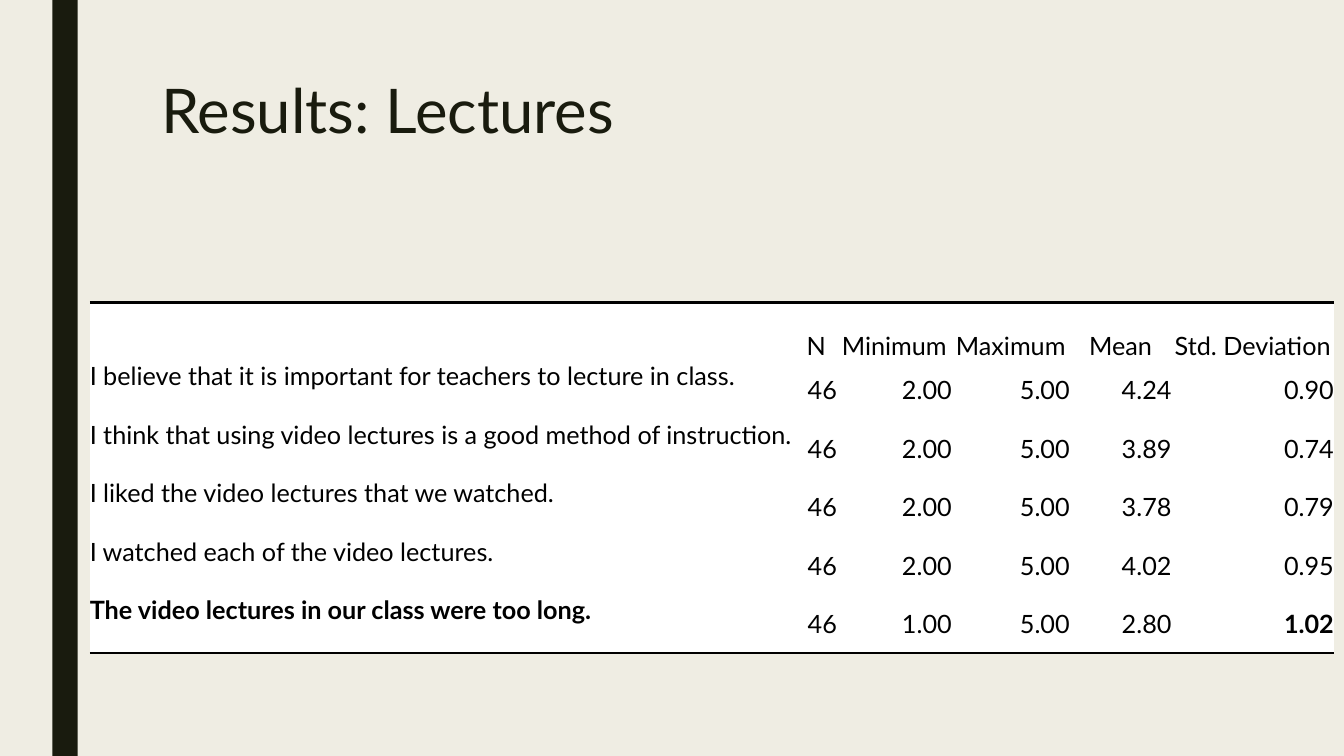
from lxml.etree import SubElement
from pptx import Presentation
from pptx.dml.color import RGBColor
from pptx.enum.shapes import MSO_SHAPE
from pptx.enum.text import MSO_ANCHOR, PP_ALIGN
from pptx.oxml.ns import qn
from pptx.util import Inches, Pt

CREAM = RGBColor(0xEF, 0xED, 0xE3)
DARK = RGBColor(0x19, 0x1B, 0x0E)
BLACK = RGBColor(0, 0, 0)
WHITE = RGBColor(0xFF, 0xFF, 0xFF)
FONT = "Lato"

COLUMN_WIDTHS = [7, 0.41, 1.14, 1.17, 1.01, 1.61]
ROW_HEIGHT = 0.58
RESULTS = [
    ["", "N", "Minimum", "Maximum", "Mean", "Std. Deviation"],
    ["I believe that it is important for teachers to lecture in class.",
     "46", "2.00", "5.00", "4.24", "0.90"],
    ["I think that using video lectures is a good method of instruction.",
     "46", "2.00", "5.00", "3.89", "0.74"],
    ["I liked the video lectures that we watched.",
     "46", "2.00", "5.00", "3.78", "0.79"],
    ["I watched each of the video lectures.",
     "46", "2.00", "5.00", "4.02", "0.95"],
    ["The video lectures in our class were too long.",
     "46", "1.00", "5.00", "2.80", "1.02"],
]
BOLD_TEXTS = {"The video lectures in our class were too long.", "1.02"}


def write_text(frame, text, size=18, color=BLACK, bold=False,
               align=PP_ALIGN.LEFT, line_spacing=None):
    para = frame.paragraphs[0]
    para.alignment = align
    para.line_spacing = line_spacing
    if text:
        span = para.add_run()
        span.text = text
        span.font.name = FONT
        span.font.size = Pt(size)
        span.font.bold = bold
        span.font.color.rgb = color


def add_side_bar(page):
    bar = page.shapes.add_shape(MSO_SHAPE.RECTANGLE, Inches(0.52), 0,
                                Inches(0.25), Inches(7.5))
    bar.shadow.inherit = False
    bar.fill.solid()
    bar.fill.fore_color.rgb = DARK
    bar.line.fill.background()


def add_title(page, text):
    box = page.shapes.add_textbox(Inches(1.5), Inches(0.75),
                                  Inches(10.5), Inches(1.62))
    box.text_frame.word_wrap = True
    write_text(box.text_frame, text, size=44, color=DARK, line_spacing=0.89)


def set_borders(cell, ruled_sides):
    """Draw a 2 pt rule on the named sides and clear the others."""
    properties = cell._tc.get_or_add_tcPr()
    for side in ("L", "R", "T", "B"):
        line = SubElement(properties, qn(f"a:ln{side}"))
        if side in ruled_sides:
            line.set("w", str(Pt(2)))
            fill = SubElement(line, qn("a:solidFill"))
            SubElement(fill, qn("a:srgbClr")).set("val", str(BLACK))
        else:
            line.set("w", "0")
            SubElement(line, qn("a:noFill"))


def format_cell(cell, text, align, anchor, ruled_sides):
    cell.margin_left = cell.margin_right = 0
    cell.margin_top = cell.margin_bottom = 0
    cell.vertical_anchor = anchor
    set_borders(cell, ruled_sides)
    cell.fill.solid()
    cell.fill.fore_color.rgb = WHITE
    write_text(cell.text_frame, text, align=align, bold=text in BOLD_TEXTS)


def add_results_table(page):
    last_row = len(RESULTS) - 1
    table = page.shapes.add_table(
        len(RESULTS), len(COLUMN_WIDTHS), Inches(0.89), Inches(3),
        Inches(sum(COLUMN_WIDTHS)), Inches(ROW_HEIGHT * len(RESULTS))).table
    table.first_row = table.horz_banding = False
    for column, width in zip(table.columns, COLUMN_WIDTHS):
        column.width = Inches(width)

    for r, values in enumerate(RESULTS):
        table.rows[r].height = Inches(ROW_HEIGHT)
        ruled_sides = {0: "T", last_row: "B"}.get(r, "")
        for c, text in enumerate(values):
            if r == 0:
                align, anchor = PP_ALIGN.CENTER, MSO_ANCHOR.BOTTOM
            elif c == 0:
                align, anchor = PP_ALIGN.LEFT, MSO_ANCHOR.TOP
            else:
                align, anchor = PP_ALIGN.RIGHT, MSO_ANCHOR.MIDDLE
            format_cell(table.cell(r, c), text, align, anchor, ruled_sides)


def main():
    deck = Presentation()
    deck.slide_width, deck.slide_height = Inches(13.33), Inches(7.5)
    page = deck.slides.add_slide(deck.slide_layouts[6])
    page.background.fill.solid()
    page.background.fill.fore_color.rgb = CREAM

    # Side bar and title
    add_side_bar(page)
    add_title(page, "Results: Lectures")
    # Survey results
    add_results_table(page)
    deck.save("out.pptx")


if __name__ == "__main__":
    main()
